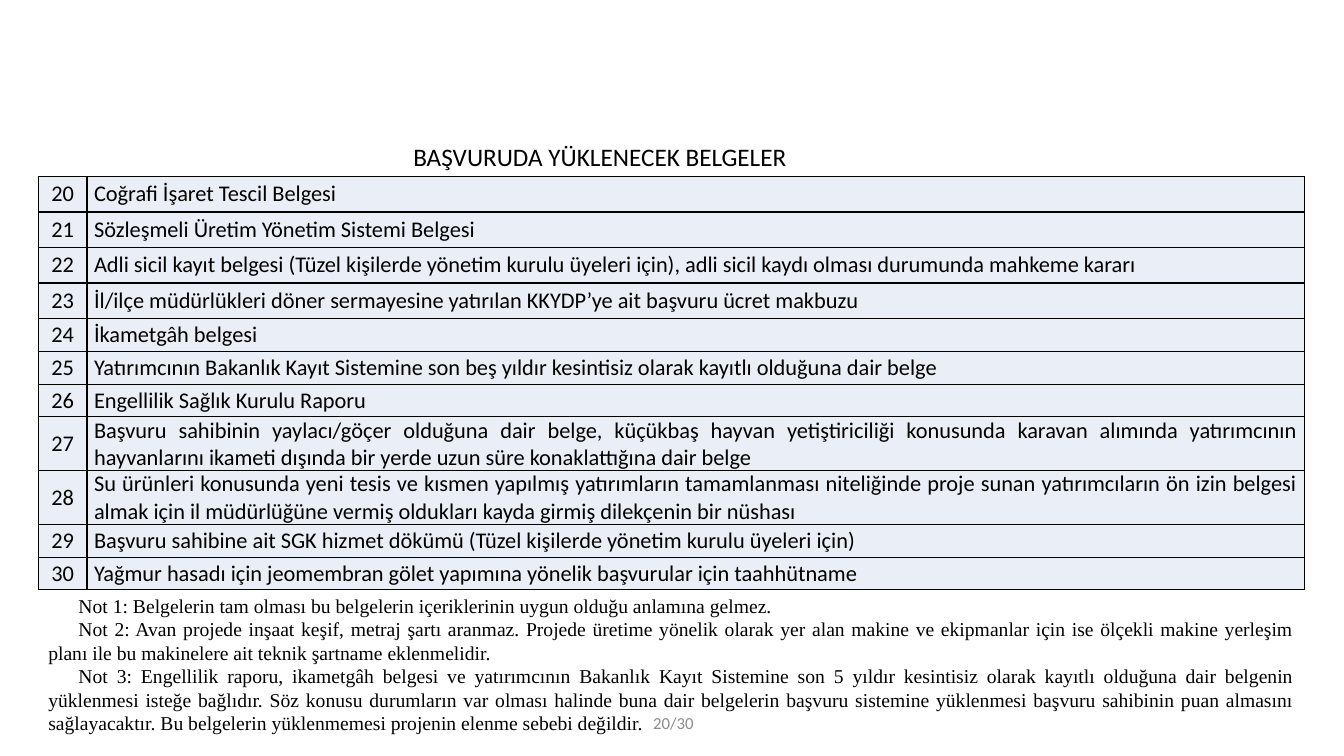
from lxml.etree import SubElement
from pptx import Presentation
from pptx.dml.color import RGBColor
from pptx.enum.text import MSO_ANCHOR as ANCHOR, MSO_AUTO_SIZE as FIT, PP_ALIGN as ALIGN
from pptx.oxml.ns import qn
from pptx.util import Pt

COLORS = {"text": "000000", "cell": "EAEFF7", "border": "000000", "page": "8C8C8C"}
SANS, SERIF = "Calibri", "Times New Roman"

FIRST_NUMBER = 20
NUMBER_WIDTH = 34.8
TALL, SHORT, DOUBLE = 25.4, 23.4, 36
DOCUMENTS = [
    (TALL, "Coğrafi İşaret Tescil Belgesi"),
    (TALL, "Sözleşmeli Üretim Yönetim Sistemi Belgesi"),
    (TALL, "Adli sicil kayıt belgesi (Tüzel kişilerde yönetim kurulu üyeleri için), "
           "adli sicil kaydı olması durumunda mahkeme kararı"),
    (TALL, "İl/ilçe müdürlükleri döner sermayesine yatırılan KKYDP’ye ait başvuru ücret makbuzu"),
    (SHORT, "İkametgâh belgesi"),
    (SHORT, "Yatırımcının Bakanlık Kayıt Sistemine son beş yıldır kesintisiz olarak kayıtlı "
            "olduğuna dair belge"),
    (SHORT, "Engellilik Sağlık Kurulu Raporu"),
    (DOUBLE, "Başvuru sahibinin yaylacı/göçer olduğuna dair belge, küçükbaş hayvan yetiştiriciliği "
             "konusunda karavan alımında yatırımcının hayvanlarını ikameti dışında bir yerde uzun "
             "süre konaklattığına dair belge"),
    (DOUBLE, "Su ürünleri konusunda yeni tesis ve kısmen yapılmış yatırımların tamamlanması "
             "niteliğinde proje sunan yatırımcıların ön izin belgesi almak için il müdürlüğüne "
             "vermiş oldukları kayda girmiş dilekçenin bir nüshası"),
    (SHORT, "Başvuru sahibine ait SGK hizmet dökümü (Tüzel kişilerde yönetim kurulu üyeleri için)"),
    (SHORT, "Yağmur hasadı için jeomembran gölet yapımına yönelik başvurular için taahhütname"),
]
NOTES = [
    "Not 1: Belgelerin tam olması bu belgelerin içeriklerinin uygun olduğu anlamına gelmez.",
    "Not 2: Avan projede inşaat keşif, metraj şartı aranmaz. Projede üretime yönelik olarak yer "
    "alan makine ve ekipmanlar için ise ölçekli makine yerleşim planı ile bu makinelere ait teknik "
    "şartname eklenmelidir.",
    "Not 3: Engellilik raporu, ikametgâh belgesi ve yatırımcının Bakanlık Kayıt Sistemine son 5 "
    "yıldır kesintisiz olarak kayıtlı olduğuna dair belgenin yüklenmesi isteğe bağlıdır. Söz konusu "
    "durumların var olması halinde buna dair belgelerin başvuru sistemine yüklenmesi başvuru "
    "sahibinin puan almasını sağlayacaktır. Bu belgelerin yüklenmemesi projenin elenme sebebi "
    "değildir.",
]


def rgb(name):
    return RGBColor.from_string(COLORS[name])


def style(p, size, align, font=SANS, color="text"):
    p.alignment = align
    p.font.size = Pt(size)
    p.font.name = font
    p.font.color.rgb = rgb(color)


def add_title(slide, x, y, w, h):
    sp = slide.shapes.title
    sp.left, sp.top, sp.width, sp.height = Pt(x), Pt(y), Pt(w), Pt(h)
    tf = sp.text_frame
    tf.text = "BAŞVURUDA YÜKLENECEK BELGELER"
    tf.auto_size = FIT.NONE
    tf.vertical_anchor = ANCHOR.TOP
    style(tf.paragraphs[0], 18, ALIGN.LEFT)


def add_borders(cell):
    tc_pr = cell._tc.get_or_add_tcPr()
    for side in ("L", "R", "T", "B"):
        ln = SubElement(tc_pr, qn(f"a:ln{side}"), w=str(Pt(1)))
        fill = SubElement(ln, qn("a:solidFill"))
        SubElement(fill, qn("a:srgbClr"), val=COLORS["border"])


def fill_cell(cell, text, align):
    add_borders(cell)
    cell.fill.solid()
    cell.fill.fore_color.rgb = rgb("cell")
    cell.vertical_anchor = ANCHOR.MIDDLE
    cell.margin_left = cell.margin_right = Pt(5)
    cell.margin_top = cell.margin_bottom = 0
    cell.text = text
    style(cell.text_frame.paragraphs[0], 16, align)


def add_documents(slide, x, y, w):
    height = sum(h for h, _ in DOCUMENTS)
    table = slide.shapes.add_table(len(DOCUMENTS), 2, Pt(x), Pt(y), Pt(w), Pt(height)).table
    table.first_row = table.horz_banding = False
    table.columns[0].width = Pt(NUMBER_WIDTH)
    table.columns[1].width = Pt(w - NUMBER_WIDTH)
    for i, (row_height, text) in enumerate(DOCUMENTS):
        table.rows[i].height = Pt(row_height)
        fill_cell(table.cell(i, 0), str(FIRST_NUMBER + i), ALIGN.CENTER)
        fill_cell(table.cell(i, 1), text, ALIGN.JUSTIFY)


def add_notes(slide, x, y, w, h):
    tf = slide.shapes.add_textbox(Pt(x), Pt(y), Pt(w), Pt(h)).text_frame
    tf.word_wrap = True
    tf.text = "\n".join(NOTES)
    for p in tf.paragraphs:
        p._p.get_or_add_pPr().set("indent", str(Pt(21.6)))
        style(p, 14, ALIGN.JUSTIFY, SERIF)


def add_page_number(slide, x, y, w, h):
    tf = slide.shapes.add_textbox(Pt(x), Pt(y), Pt(w), Pt(h)).text_frame
    tf.word_wrap = True
    tf.vertical_anchor = ANCHOR.MIDDLE
    tf.text = "20/30"
    style(tf.paragraphs[0], 12, ALIGN.RIGHT, color="page")


def main():
    prs = Presentation()
    prs.slide_width, prs.slide_height = Pt(960), Pt(540)
    slide = prs.slides.add_slide(prs.slide_layouts[5])
    left, width = 27.4, 904.6
    add_page_number(slide, 457.2, 504, 45.4, 25.2)
    add_documents(slide, left, 126, width)
    add_title(slide, 288, 97.2, 300.2, 28.8)
    add_notes(slide, left, 420.5, width, 108.7)
    prs.save("out.pptx")


if __name__ == "__main__":
    main()
